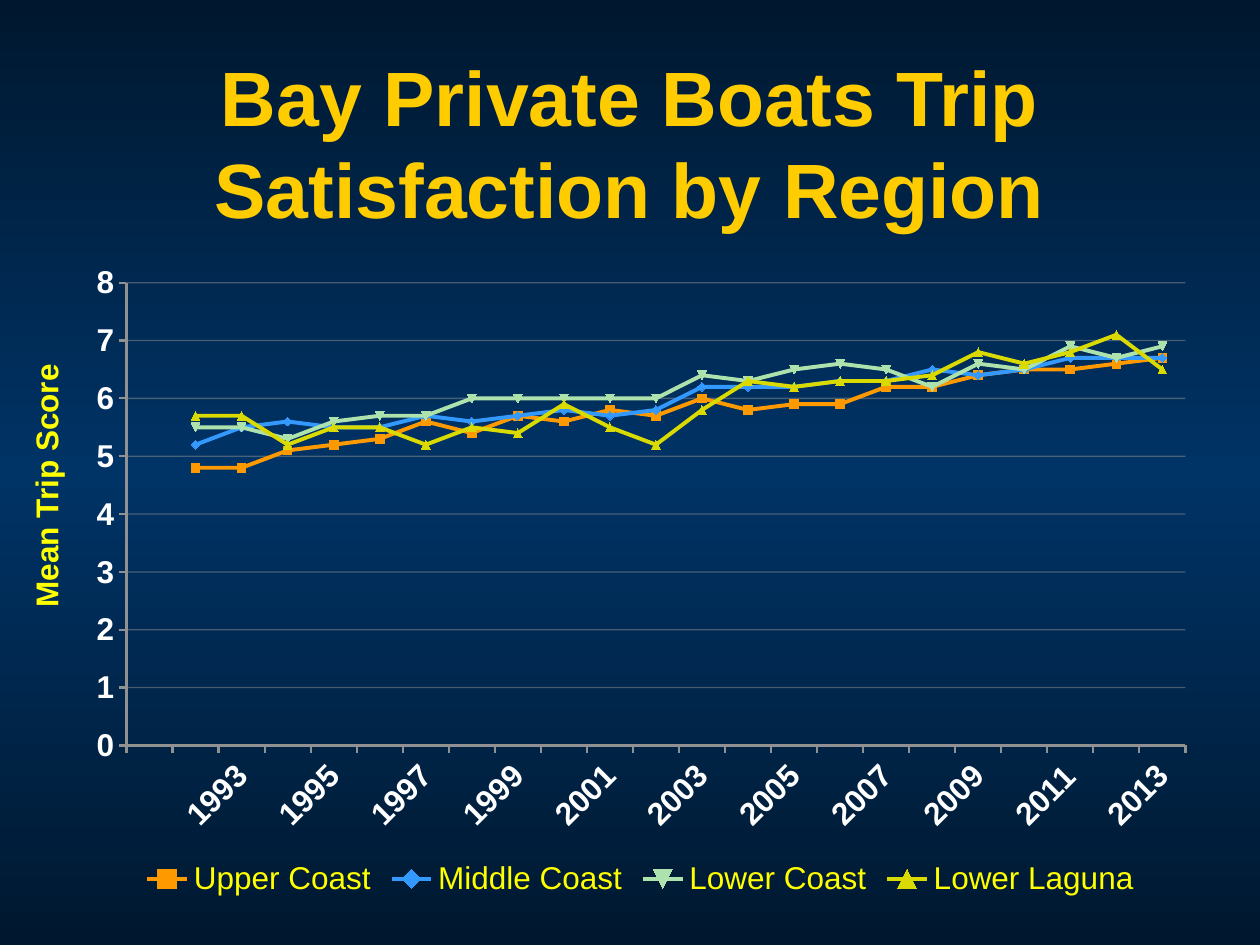
from copy import deepcopy
from dataclasses import dataclass

from pptx import Presentation
from pptx.chart.data import CategoryChartData
from pptx.dml.color import RGBColor as RGB
from pptx.enum.chart import XL_CHART_TYPE as CT, XL_LEGEND_POSITION as LP, XL_TICK_MARK as TM
from pptx.enum.text import MSO_ANCHOR as ANCHOR, MSO_AUTO_SIZE as AUTO, PP_ALIGN as ALIGN
from pptx.oxml.ns import qn
from pptx.util import Cm, Pt
from lxml.etree import SubElement


@dataclass(frozen=True)
class Theme:
    font: str = "Arial"
    title_size: int = 44
    body_size: int = 18
    title: str = "FFCC00"
    label: str = "FFFF00"
    tick: str = "FFFFFF"
    axis: str = "919191"
    background: tuple = ("00182F", "003366", "00182F")
    series: tuple = ("FF9900", "3399FF", "ADE2AD", "DADA00")


THEME = Theme()

YEARS = [""] + [str(year) for year in range(1992, 2014)]
SCORES = {
    "Upper Coast": [4.8, 4.8, 5.1, 5.2, 5.3, 5.6, 5.4, 5.7, 5.6, 5.8, 5.7,
                    6, 5.8, 5.9, 5.9, 6.2, 6.2, 6.4, 6.5, 6.5, 6.6, 6.7],
    "Middle Coast": [5.2, 5.5, 5.6, 5.5, 5.5, 5.7, 5.6, 5.7, 5.8, 5.7, 5.8,
                     6.2, 6.2, 6.2, 6.3, 6.3, 6.5, 6.4, 6.5, 6.7, 6.7, 6.7],
    "Lower Coast": [5.5, 5.5, 5.3, 5.6, 5.7, 5.7, 6, 6, 6, 6, 6,
                    6.4, 6.3, 6.5, 6.6, 6.5, 6.2, 6.6, 6.5, 6.9, 6.7, 6.9],
    "Lower Laguna": [5.7, 5.7, 5.2, 5.5, 5.5, 5.2, 5.5, 5.4, 5.9, 5.5, 5.2,
                     5.8, 6.3, 6.2, 6.3, 6.3, 6.4, 6.8, 6.6, 6.8, 7.1, 6.5],
}


def set_font(font, size, color, bold):
    font.name, font.size, font.bold = THEME.font, Pt(size), bold
    font.color.rgb = RGB.from_string(color)


def set_line(line, color, width):
    line.width = Pt(width)
    line.color.rgb = RGB.from_string(color)


def paint_background(s):
    fill = s.background.fill
    fill.gradient()
    fill.gradient_angle = 270
    # A third stop makes room for the bright middle band
    stops = s.element.find(".//" + qn("a:gsLst"))
    stops.append(deepcopy(stops[0]))
    for i, (stop, color) in enumerate(zip(fill.gradient_stops, THEME.background)):
        stop.position = i / 2
        stop.color.rgb = RGB.from_string(color)


def place_title(s, text, box):
    sp = s.shapes.title
    sp.left, sp.top, sp.width, sp.height = box
    tf = sp.text_frame
    tf.text = text
    tf.word_wrap, tf.auto_size = True, AUTO.NONE
    tf.vertical_anchor = ANCHOR.MIDDLE
    p = tf.paragraphs[0]
    p.alignment = ALIGN.CENTER
    set_font(p.font, THEME.title_size, THEME.title, True)


def style_axis(axis):
    axis.major_tick_mark, axis.minor_tick_mark = TM.OUTSIDE, TM.NONE
    set_font(axis.tick_labels.font, THEME.body_size, THEME.tick, True)
    set_line(axis.format.line, THEME.axis, 1.25)


def fix_plot_area(chart, box, left, top, width, height):
    """Pin the inner plot area, given relative to the chart box."""
    area = chart.element.find(".//" + qn("c:plotArea"))
    layout = area.find(qn("c:layout"))
    if layout is None:
        layout = SubElement(area, qn("c:layout"))
        area.insert(0, layout)
    manual = SubElement(layout, qn("c:manualLayout"))
    settings = {"layoutTarget": "inner", "xMode": "edge", "yMode": "edge",
                "x": left / box[2], "y": top / box[3],
                "w": width / box[2], "h": height / box[3]}
    for name, value in settings.items():
        SubElement(manual, qn("c:" + name)).set("val", str(value))


def place_chart(s, box):
    data = CategoryChartData(number_format="0.0")
    data.categories = YEARS
    for name, values in SCORES.items():
        data.add_series(name, [None] + values)
    chart = s.shapes.add_chart(CT.LINE_MARKERS, *box, data).chart
    chart.has_title = False
    set_font(chart.font, THEME.body_size, THEME.label, False)
    fix_plot_area(chart, box, Cm(1.07), Cm(0.62), Cm(21.35), Cm(9.33))

    # Axes: every second year is labelled, at a slant
    years, scores = chart.category_axis, chart.value_axis
    for axis in (years, scores):
        style_axis(axis)
    ax = years._element
    ax.find(qn("c:txPr")).find(qn("a:bodyPr")).set("rot", "-2700000")
    skip = SubElement(ax, qn("c:tickLblSkip"))
    skip.set("val", "2")
    ax.find(qn("c:noMultiLvlLbl")).addprevious(skip)
    scores.minimum_scale, scores.maximum_scale, scores.major_unit = 0, 8, 1
    scores.tick_labels.number_format = "0"
    scores.tick_labels.number_format_is_linked = False
    set_line(scores.major_gridlines.format.line, THEME.axis, 0.75)
    grid_color = scores._element.find(qn("c:majorGridlines")).find(".//" + qn("a:srgbClr"))
    SubElement(grid_color, qn("a:alpha")).set("val", "50000")

    # Regions
    plot = chart.plots[0]
    plot.vary_by_categories = False
    for series, color in zip(plot.series, THEME.series):
        series.smooth = False
        set_line(series.format.line, color, 2.25)
        marker = series.marker
        marker.size = 5
        marker.format.fill.solid()
        marker.format.fill.fore_color.rgb = RGB.from_string(color)
        set_line(marker.format.line, color, 0.75)

    chart.has_legend = True
    chart.legend.position = LP.BOTTOM
    chart.legend.include_in_layout = False
    set_font(chart.legend.font, THEME.body_size, THEME.label, False)


def place_axis_label(s, text, box):
    tf = s.shapes.add_textbox(*box).text_frame
    tf.text = text
    tf.word_wrap = False
    tf.auto_size = AUTO.SHAPE_TO_FIT_TEXT
    tf._txBody.find(qn("a:bodyPr")).set("vert", "vert270")
    set_font(tf.paragraphs[0].font, THEME.body_size, THEME.label, True)


def main():
    prs = Presentation()
    prs.slide_width, prs.slide_height = Cm(25.4), Cm(19.05)
    s = prs.slides.add_slide(prs.slide_layouts[5])
    paint_background(s)
    place_title(s, "Bay Private Boats Trip Satisfaction by Region",
                (Cm(0), Cm(1.27), prs.slide_width, Cm(3.18)))
    place_chart(s, (Cm(1.48), Cm(5.08), Cm(22.86), Cm(13.12)))
    place_axis_label(s, "Mean Trip Score", (Cm(0.42), Cm(6.99), Cm(1.27), Cm(5.51)))
    prs.save("out.pptx")


if __name__ == "__main__":
    main()
